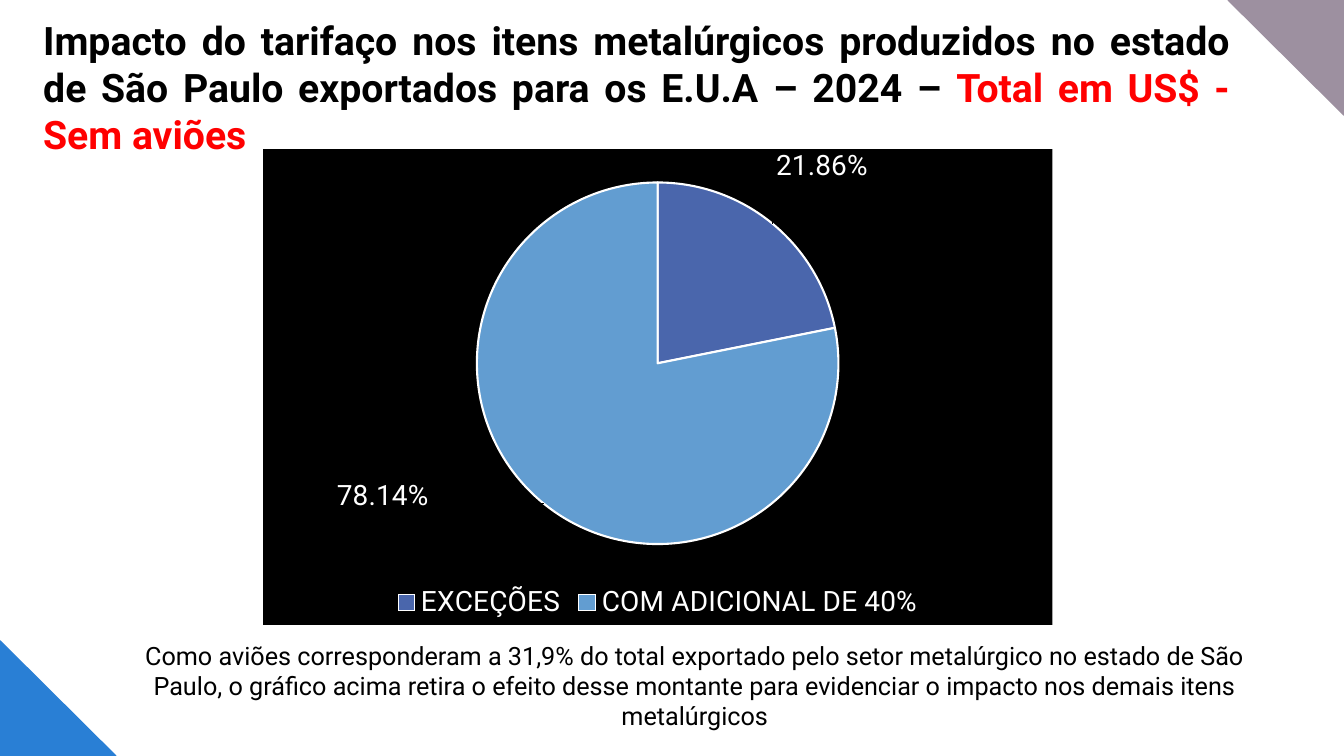
from dataclasses import dataclass

from lxml.etree import SubElement
from pptx import Presentation
from pptx.chart.data import CategoryChartData
from pptx.dml.color import RGBColor
from pptx.enum.chart import XL_CHART_TYPE as ChartType
from pptx.enum.chart import XL_LABEL_POSITION as LabelPosition
from pptx.enum.chart import XL_LEGEND_POSITION as LegendPosition
from pptx.enum.shapes import MSO_SHAPE as ShapeKind
from pptx.enum.text import MSO_AUTO_SIZE as AutoSize
from pptx.enum.text import PP_ALIGN as Align
from pptx.oxml import parse_xml
from pptx.oxml.ns import nsdecls, qn
from pptx.util import Cm, Pt

FONT = "Roboto"
PERCENT = "0.00%"
COLORS = {
    "black": "000000",
    "white": "FFFFFF",
    "red": "FF0000",
    "blue": "297FD5",
    "mauve": "9D90A0",
    "exempt": "4A66AC",
    "taxed": "629DD1",
}


@dataclass(frozen=True)
class Box:
    left: float
    top: float
    width: float
    height: float

    def lengths(self) -> tuple:
        return Cm(self.left), Cm(self.top), Cm(self.width), Cm(self.height)


@dataclass(frozen=True)
class Corner:
    box: Box
    color: str
    rotation: int


@dataclass(frozen=True)
class TextRun:
    text: str
    color: str


@dataclass(frozen=True)
class TextBlock:
    box: Box
    runs: tuple
    size: int
    bold: bool
    alignment: Align


@dataclass(frozen=True)
class Slice:
    name: str
    value: float
    color: str
    label_shift: tuple


CORNERS = (
    Corner(Box(0, 16.15, 2.92, 2.9), "blue", 0),
    Corner(Box(30.95, 0, 2.92, 2.9), "mauve", 180),
)
TITLE = TextBlock(
    Box(0.84, 0.28, 30.4, 3.84),
    (
        TextRun(
            "Impacto do tarifaço nos itens metalúrgicos produzidos no estado "
            "de São Paulo exportados para os E.U.A – 2024 – ",
            "black",
        ),
        TextRun("Total em US$ - Sem aviões", "red"),
    ),
    28,
    True,
    Align.JUSTIFY,
)
CAPTION = TextBlock(
    Box(2.92, 16, 29.18, 1.8),
    (
        TextRun(
            "Como aviões corresponderam a 31,9% do total exportado pelo setor "
            "metalúrgico no estado de São Paulo, o gráfico acima retira o efeito "
            "desse montante para evidenciar o impacto nos demais itens metalúrgicos",
            "black",
        ),
    ),
    18,
    False,
    Align.CENTER,
)
CHART_BOX = Box(6.63, 3.76, 19.89, 11.99)
PIE_AREA = Box(0.27, 0.07, 0.46, 0.76)
SLICES = (
    Slice("EXCEÇÕES", 0.2186, "exempt", (0, -0.08)),
    Slice("COM ADICIONAL DE 40%", 0.7814, "taxed", (-0.14, -0.06)),
)


def rgb(name: str) -> RGBColor:
    return RGBColor.from_string(COLORS[name])


def style_font(font, size: int, color: str, bold: bool = False) -> None:
    font.name = FONT
    font.size = Pt(size)
    font.bold = bold
    font.color.rgb = rgb(color)


def add_corner(slide, corner: Corner) -> None:
    shape = slide.shapes.add_shape(ShapeKind.RIGHT_TRIANGLE, *corner.box.lengths())
    shape.rotation = corner.rotation
    shape.shadow.inherit = False
    shape.fill.solid()
    shape.fill.fore_color.rgb = rgb(corner.color)
    shape.line.color.rgb = rgb(corner.color)
    shape.line.width = Pt(1)


def add_text(slide, block: TextBlock) -> None:
    frame = slide.shapes.add_textbox(*block.box.lengths()).text_frame
    frame.word_wrap = True
    frame.auto_size = AutoSize.SHAPE_TO_FIT_TEXT
    paragraph = frame.paragraphs[0]
    paragraph.alignment = block.alignment
    for text_run in block.runs:
        run = paragraph.add_run()
        run.text = text_run.text
        style_font(run.font, block.size, text_run.color, block.bold)


def make_layout(**values):
    layout = parse_xml(f"<c:layout {nsdecls('c')}><c:manualLayout/></c:layout>")
    for tag, value in values.items():
        SubElement(layout[0], qn(f"c:{tag}")).set("val", str(value))
    return layout


def place_pie(chart) -> None:
    plot_area = chart.element.find(".//" + qn("c:plotArea"))
    for layout in plot_area.findall(qn("c:layout")):
        plot_area.remove(layout)
    plot_area.insert(0, make_layout(
        layoutTarget="inner", xMode="edge", yMode="edge",
        x=PIE_AREA.left, y=PIE_AREA.top, w=PIE_AREA.width, h=PIE_AREA.height,
    ))


def fill_background(chart, color: str) -> None:
    chart.element.find(qn("c:chart")).addnext(parse_xml(
        f"<c:spPr {nsdecls('c', 'a')}><a:solidFill>"
        f'<a:srgbClr val="{COLORS[color]}"/></a:solidFill>'
        "<a:ln><a:noFill/></a:ln></c:spPr>"
    ))


def style_slice(series, index: int, part: Slice) -> None:
    point = series.points[index]
    point.format.fill.solid()
    point.format.fill.fore_color.rgb = rgb(part.color)
    point.format.line.color.rgb = rgb("white")
    point.format.line.width = Pt(1.5)
    label = point.data_label
    label.position = LabelPosition.OUTSIDE_END
    style_font(label.font, 20, "white")
    element = series.data_labels._element.findall(qn("c:dLbl"))[index]
    shift_x, shift_y = part.label_shift
    element.insert(1, make_layout(x=shift_x, y=shift_y))
    element.insert(2, parse_xml(
        f'<c:numFmt {nsdecls("c")} formatCode="{PERCENT}" sourceLinked="0"/>'
    ))


def add_pie(slide) -> None:
    data = CategoryChartData(number_format=PERCENT)
    data.categories = [part.name for part in SLICES]
    data.add_series("Series 1", [part.value for part in SLICES])
    chart = slide.shapes.add_chart(ChartType.PIE, *CHART_BOX.lengths(), data).chart
    chart.has_title = False
    style_font(chart.font, 10, "white")
    chart.has_legend = True
    chart.legend.position = LegendPosition.BOTTOM
    chart.legend.include_in_layout = False
    style_font(chart.legend.font, 20, "white")
    series = chart.plots[0].series[0]
    labels = series.data_labels
    labels.show_value = True
    labels.number_format = PERCENT
    labels.number_format_is_linked = False
    labels.position = LabelPosition.OUTSIDE_END
    style_font(labels.font, 20, "white")
    for index, part in enumerate(SLICES):
        style_slice(series, index, part)
    place_pie(chart)
    fill_background(chart, "black")


def main() -> None:
    presentation = Presentation()
    presentation.slide_width, presentation.slide_height = Cm(33.87), Cm(19.05)
    slide = presentation.slides.add_slide(presentation.slide_layouts[6])
    for corner in CORNERS:
        add_corner(slide, corner)
    add_text(slide, TITLE)
    add_pie(slide)
    add_text(slide, CAPTION)
    presentation.save("out.pptx")


if __name__ == "__main__":
    main()
